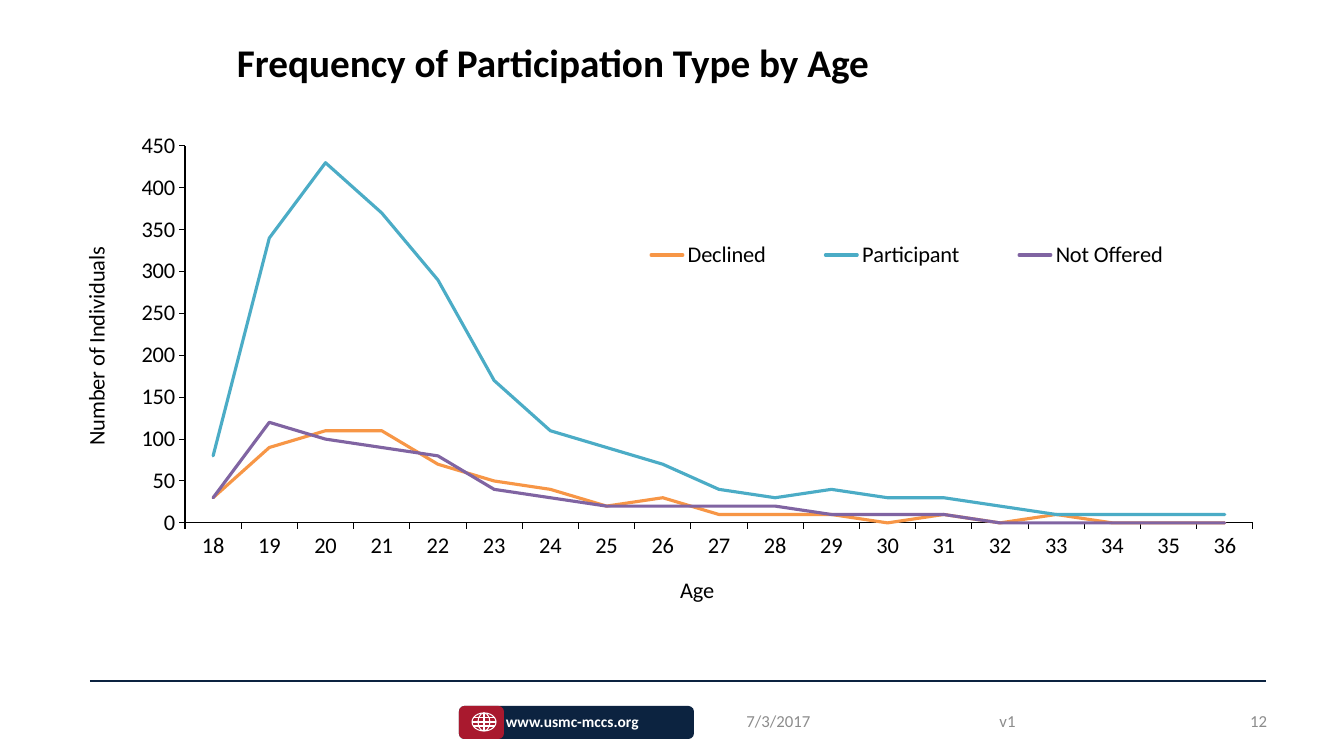
from dataclasses import dataclass

import pptx
import pptx.chart.data
import pptx.dml.color
import pptx.enum.chart
import pptx.enum.shapes
import pptx.enum.text
import pptx.oxml
import pptx.oxml.ns
import pptx.util
from lxml import etree

PX_PER_INCH = 100.8
COLORS = {
    "navy": "0C2340",
    "red": "A9192E",
    "white": "FFFFFF",
    "black": "000000",
    "grey": "8C8C8C",
    "orange": "F79646",
    "teal": "4BACC6",
    "purple": "8064A2",
}
ALIGN = pptx.enum.text.PP_ALIGN
ANCHOR = pptx.enum.text.MSO_ANCHOR
SHAPE = pptx.enum.shapes.MSO_SHAPE


@dataclass
class Box:
    left: int
    top: int
    width: int
    height: int


@dataclass
class Label:
    text: str
    box: Box
    size: int
    color: str
    bold: bool = False
    align: ALIGN = ALIGN.LEFT
    anchor: ANCHOR = ANCHOR.TOP


@dataclass
class Panel:
    kind: SHAPE
    box: Box
    fill: str | None = None
    outline: str | None = None


@dataclass
class Rule:
    start: tuple[int, int]
    end: tuple[int, int]
    color: str
    weight: float = 0.75


@dataclass
class AgeSeries:
    name: str
    color: str
    counts: list[int]


CHART_BOX = Box(58, 121, 1218, 551)
PLOT_BOX = Box(185, 146, 1068, 377)
LEGEND_BOX = Box(599, 232, 616, 46)
AGE_TITLE_BOX = Box(676, 571, 36, 26)
COUNT_TITLE_BOX = Box(77, 243, 26, 200)
AGES = range(18, 37)
SERIES = [
    AgeSeries("Declined", "orange",
              [30, 90, 110, 110, 70, 50, 40, 20, 30, 10, 10, 10, 0, 10, 0, 10, 0, 0, 0]),
    AgeSeries("Participant", "teal",
              [80, 340, 430, 370, 290, 170, 110, 90, 70, 40, 30, 40, 30, 30, 20, 10, 10, 10, 10]),
    AgeSeries("Not Offered", "purple",
              [30, 120, 100, 90, 80, 40, 30, 20, 20, 20, 20, 10, 10, 10, 0, 0, 0, 0, 0]),
]
PANELS = [
    Panel(SHAPE.ROUNDED_RECTANGLE, Box(459, 706, 235, 33), fill="navy"),
    Panel(SHAPE.ROUNDED_RECTANGLE, Box(459, 706, 45, 33), fill="red"),
    Panel(SHAPE.OVAL, Box(472, 713, 24, 18), outline="white"),
    Panel(SHAPE.OVAL, Box(478, 713, 12, 18), outline="white"),
]
RULES = [
    Rule((90, 681), (1266, 681), "navy"),
    Rule((484, 713), (484, 731), "white"),
    Rule((473, 718), (495, 718), "white"),
    Rule((472, 722), (496, 722), "white"),
    Rule((473, 726), (495, 726), "white"),
]
LABELS = [
    Label("www.usmc-mccs.org", Box(496, 707, 246, 29), 11, "white", bold=True),
    Label("Frequency of Participation Type by Age", Box(227, 33, 663, 67), 28, "black", bold=True),
    Label("12", Box(1165, 701, 112, 40), 12, "grey", align=ALIGN.RIGHT, anchor=ANCHOR.MIDDLE),
    Label("v1", Box(851, 701, 313, 40), 12, "grey", align=ALIGN.CENTER, anchor=ANCHOR.MIDDLE),
    Label("7/3/2017", Box(706, 701, 145, 40), 12, "grey", align=ALIGN.CENTER, anchor=ANCHOR.MIDDLE),
]


def px(length: int) -> int:
    return round(length * 914400 / PX_PER_INCH)


def emu(box: Box) -> tuple[int, int, int, int]:
    return px(box.left), px(box.top), px(box.width), px(box.height)


def rgb(color: str) -> pptx.dml.color.RGBColor:
    return pptx.dml.color.RGBColor.from_string(COLORS[color])


def style_font(font, size: int, color: str, bold: bool = False) -> None:
    font.name = "Calibri"
    font.size = pptx.util.Pt(size)
    font.bold = bold
    font.color.rgb = rgb(color)


def style_line(line, color: str, weight: float) -> None:
    line.color.rgb = rgb(color)
    line.width = pptx.util.Pt(weight)


def add_panel(slide, panel: Panel) -> None:
    shape = slide.shapes.add_shape(panel.kind, *emu(panel.box))
    shape.shadow.inherit = False
    if panel.fill:
        shape.fill.solid()
        shape.fill.fore_color.rgb = rgb(panel.fill)
    else:
        shape.fill.background()
    if panel.outline:
        style_line(shape.line, panel.outline, 0.75)
    else:
        shape.line.fill.background()


def add_rule(slide, rule: Rule) -> None:
    connector = slide.shapes.add_connector(
        pptx.enum.shapes.MSO_CONNECTOR.STRAIGHT, *map(px, rule.start + rule.end))
    style_line(connector.line, rule.color, rule.weight)
    etree.SubElement(connector._element.spPr, pptx.oxml.ns.qn("a:effectLst"))


def add_label(slide, label: Label) -> None:
    frame = slide.shapes.add_textbox(*emu(label.box)).text_frame
    frame.word_wrap = True
    frame.vertical_anchor = label.anchor
    paragraph = frame.paragraphs[0]
    paragraph.text = label.text
    paragraph.alignment = label.align
    style_font(paragraph.font, label.size, label.color, label.bold)


def place_in_chart(element, index: int, box: Box, inner: bool = False) -> None:
    qn = pptx.oxml.ns.qn
    for old_layout in element.findall(qn("c:layout")):
        element.remove(old_layout)
    layout = etree.Element(qn("c:layout"))
    manual = etree.SubElement(layout, qn("c:manualLayout"))
    settings = {"layoutTarget": "inner"} if inner else {}
    settings |= {
        "xMode": "edge",
        "yMode": "edge",
        "x": (box.left - CHART_BOX.left) / CHART_BOX.width,
        "y": (box.top - CHART_BOX.top) / CHART_BOX.height,
        "w": box.width / CHART_BOX.width,
        "h": box.height / CHART_BOX.height,
    }
    for tag, value in settings.items():
        etree.SubElement(manual, qn(f"c:{tag}")).set("val", str(value))
    element.insert(index, layout)


def style_axis(axis, title: str, title_box: Box, rotation: int) -> None:
    axis.has_major_gridlines = False
    axis.major_tick_mark = pptx.enum.chart.XL_TICK_MARK.OUTSIDE
    style_font(axis.tick_labels.font, 16, "black")
    style_line(axis.format.line, "black", 0.75)
    frame = axis.axis_title.text_frame
    frame.text = title
    style_font(frame.paragraphs[0].font, 16, "black")
    frame._txBody.bodyPr.set("rot", str(rotation))
    frame._txBody.bodyPr.set("vert", "horz")
    place_in_chart(axis.axis_title._element, 1, title_box)


def add_participation_chart(slide) -> None:
    data = pptx.chart.data.CategoryChartData(number_format="0")
    data.categories = [str(age) for age in AGES]
    for entry in SERIES:
        data.add_series(entry.name, entry.counts)
    chart = slide.shapes.add_chart(
        pptx.enum.chart.XL_CHART_TYPE.LINE, *emu(CHART_BOX), data).chart
    style_font(chart.font, 16, "black")
    chart.has_title = False
    chart.plots[0].vary_by_categories = False
    for series, entry in zip(chart.plots[0].series, SERIES):
        series.smooth = False
        series.marker.style = pptx.enum.chart.XL_MARKER_STYLE.NONE
        style_line(series.format.line, entry.color, 2.25)
        series._element.spPr.find(pptx.oxml.ns.qn("a:ln")).set("cap", "rnd")
    style_axis(chart.category_axis, "Age", AGE_TITLE_BOX, 0)
    style_axis(chart.value_axis, "Number of Individuals", COUNT_TITLE_BOX, -5400000)
    chart.value_axis.minimum_scale = 0
    chart.value_axis.maximum_scale = 450
    chart.value_axis.major_unit = 50
    chart.has_legend = True
    chart.legend.position = pptx.enum.chart.XL_LEGEND_POSITION.BOTTOM
    chart.legend.include_in_layout = False
    style_font(chart.legend.font, 16, "black")
    place_in_chart(chart.legend._element, 1, LEGEND_BOX)
    place_in_chart(chart._chartSpace.chart.plotArea, 0, PLOT_BOX, inner=True)


def main() -> None:
    deck = pptx.Presentation()
    deck.slide_width, deck.slide_height = px(1344), px(756)
    slide = deck.slides.add_slide(deck.slide_layouts[6])
    for panel in PANELS:
        add_panel(slide, panel)
    for rule in RULES:
        add_rule(slide, rule)
    for label in LABELS:
        add_label(slide, label)
    add_participation_chart(slide)
    deck.save("out.pptx")


if __name__ == "__main__":
    main()
